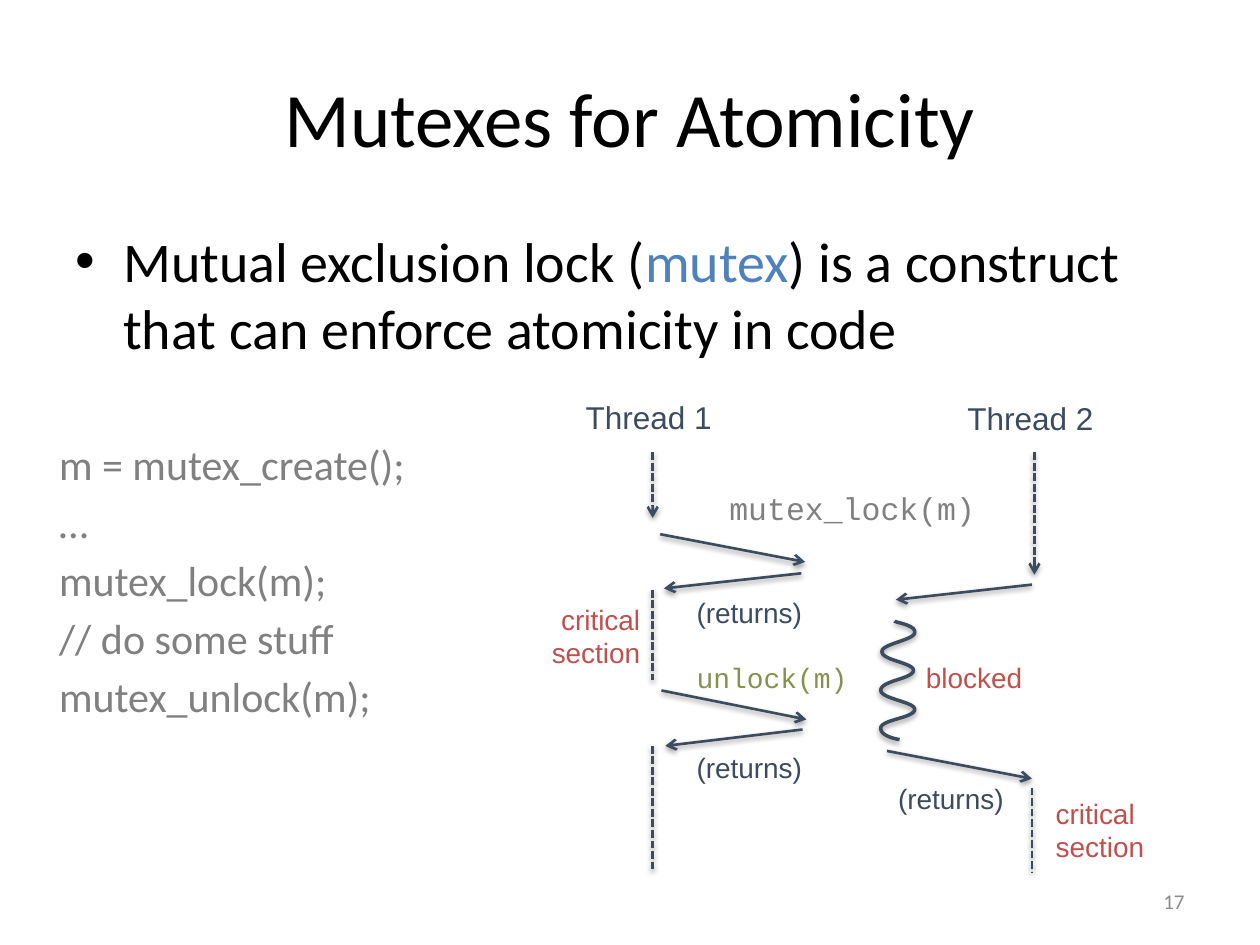
from lxml import etree
from pptx import Presentation
from pptx.dml.color import RGBColor
from pptx.enum.dml import MSO_LINE_DASH_STYLE as Dash
from pptx.enum.shapes import MSO_CONNECTOR_TYPE as Connector
from pptx.enum.text import MSO_ANCHOR as Anchor, MSO_AUTO_SIZE as AutoSize, PP_ALIGN as Align
from pptx.oxml.ns import qn
from pptx.util import Emu, Pt

PX = 9144  # 100 px to the inch
COLORS = {
    "black": "000000", "blue": "4F81BD", "gray": "808080", "number": "8C8C8C",
    "ink": "3C4B5E", "olive": "85914E", "red": "C0504D",
}
LABEL = {"font": "Arial", "size": 16, "color": "ink", "fit": True}
CODE = {"font": "Courier New", "color": "gray", "wrap": False}
ALERT = {"color": "red", "wrap": False}
HEADING = {"size": 18, "align": Align.LEFT}


def px(value):
    return Emu(round(value * PX))


def rgb(name):
    return RGBColor.from_string(COLORS[name])


def bezier(p0, p1, p2, p3, steps=16):
    """Points along a cubic curve, without its start."""
    for step in range(1, steps + 1):
        t = step / steps
        weights = ((1 - t) ** 3, 3 * t * (1 - t) ** 2, 3 * t * t * (1 - t), t ** 3)
        yield tuple(sum(w * p[axis] for w, p in zip(weights, (p0, p1, p2, p3)))
                    for axis in (0, 1))


class SlideBuilder:
    def __init__(self, slide):
        self.slide = slide

    def text(self, box, paragraphs, font="Calibri", size=16, color="black", wrap=True,
             fit=False, anchor=Anchor.TOP, align=Align.LEFT, before=0, bullet=False):
        """Each paragraph is a string or a list of (text, color) runs."""
        frame = self.slide.shapes.add_textbox(*map(px, box)).text_frame
        frame_format = {"word_wrap": wrap, "vertical_anchor": anchor,
                        "auto_size": AutoSize.SHAPE_TO_FIT_TEXT if fit else AutoSize.NONE}
        for name, value in frame_format.items():
            setattr(frame, name, value)
        for index, content in enumerate(paragraphs):
            paragraph = frame.add_paragraph() if index else frame.paragraphs[0]
            paragraph.alignment = align
            paragraph.space_before = Pt(before)
            if bullet:
                self.bullet(paragraph)
            runs = [(content, color)] if isinstance(content, str) else content
            for words, run_color in runs:
                run = paragraph.add_run()
                run.text = words
                for name, value in {"name": font, "size": Pt(size)}.items():
                    setattr(run.font, name, value)
                run.font.color.rgb = rgb(run_color)

    def bullet(self, paragraph, indent=38):
        properties = paragraph._p.get_or_add_pPr()
        properties.set("marL", str(px(indent)))
        properties.set("indent", str(-px(indent)))
        etree.SubElement(properties, qn("a:buFont"), typeface="Arial")
        etree.SubElement(properties, qn("a:buChar"), char="•")

    def stroke(self, shape, width):
        shape.line.color.rgb = rgb("ink")
        shape.line.width = Pt(width)

    def shadow(self, shape):
        effects = etree.SubElement(shape._element.spPr, qn("a:effectLst"))
        outer = etree.SubElement(effects, qn("a:outerShdw"), blurRad="39370", dist="20320",
                                 dir="5400000", rotWithShape="0")
        color = etree.SubElement(outer, qn("a:srgbClr"), val=COLORS["black"])
        etree.SubElement(color, qn("a:alpha"), val="38000")

    def line(self, start, end, dashed=False, arrow=True):
        connector = self.slide.shapes.add_connector(
            Connector.STRAIGHT, *map(px, (*start, *end)))
        self.stroke(connector, 1.5)
        if dashed:
            connector.line.dash_style = Dash.SQUARE_DOT
        if arrow:
            etree.SubElement(connector.line._get_or_add_ln(), qn("a:tailEnd"), type="arrow")
        self.shadow(connector)

    def curve(self, start, segments):
        """Open smooth line; a segment is two control points and an end."""
        points, current = [], start
        for segment in segments:
            points.extend(bezier(current, *segment))
            current = segment[-1]
        builder = self.slide.shapes.build_freeform(*map(px, start))
        builder.add_line_segments([tuple(map(px, point)) for point in points], close=False)
        shape = builder.convert_to_shape()
        shape.fill.background()
        self.stroke(shape, 2)
        self.shadow(shape)


def main():
    presentation = Presentation()
    presentation.slide_width, presentation.slide_height = px(1000), px(750)
    builder = SlideBuilder(presentation.slides.add_slide(presentation.slide_layouts[6]))

    builder.text((50, 30, 900, 125), ["Mutexes for Atomicity"], size=44,
                 anchor=Anchor.MIDDLE, align=Align.CENTER)
    builder.text((50, 175, 900, 141), [[
        ("Mutual exclusion lock (", "black"), ("mutex", "blue"),
        (") is a construct that can enforce atomicity in code", "black"),
    ]], size=32, before=6, bullet=True)
    builder.text((717, 695, 233, 40), ["17"], size=12, color="number",
                 anchor=Anchor.MIDDLE, align=Align.RIGHT)
    builder.text((37, 343, 315, 366), [
        "m = mutex_create();", "…", "mutex_lock(m);", "// do some stuff", "mutex_unlock(m);",
    ], size=24, color="gray", before=4.3)

    labels = [
        ((455, 311, 126, 41), ["Thread 1"], HEADING),
        ((758, 312, 127, 40), ["Thread 2"], HEADING),
        ((569, 383, 216, 40), ["mutex_lock(m)"], {**CODE, "size": 18}),
        ((543, 519, 142, 37), ["unlock(m)"], {**CODE, "color": "olive"}),
        ((543, 468, 107, 37), ["(returns)"], {}),
        ((543, 591, 107, 37), ["(returns)"], {}),
        ((703, 615, 111, 37), ["(returns)"], {}),
        ((725, 519, 97, 37), ["blocked"], ALERT),
        ((427, 473, 91, 64), ["critical", "section"], {**ALERT, "align": Align.RIGHT}),
        ((828, 627, 91, 64), ["critical", "section"], ALERT),
    ]
    for box, paragraphs, style in labels:
        builder.text(box, paragraphs, **{**LABEL, **style})

    calls_and_returns = [
        ((524, 424), (639, 446)), ((636, 455), (527, 467)),
        ((525, 548), (640, 571)), ((637, 579), (528, 592)),
        ((819, 464), (711, 476)), ((704, 596), (819, 618)),
    ]
    for start, end in calls_and_returns:
        builder.line(start, end)

    running = [  # x, top, bottom, arrow
        (518, 359, 411, True), (518, 468, 540, False), (518, 592, 691, False),
        (821, 359, 456, True), (819, 625, 693, False),
    ]
    for x, top, bottom, arrow in running:
        builder.line((x, top), (x, bottom), dashed=True, arrow=arrow)

    builder.curve((710, 493), [
        ((710, 494), (727, 496), (726, 502)),
        ((726, 508), (700, 511), (700, 517)),
        ((699, 524), (725, 526), (725, 532)),
        ((725, 539), (699, 540), (699, 548)),
        ((700, 555), (726, 557), (726, 563)),
        ((726, 570), (699, 571), (699, 578)),
        ((699, 585), (714, 587), (714, 587)),
    ])
    presentation.save("out.pptx")


if __name__ == "__main__":
    main()
